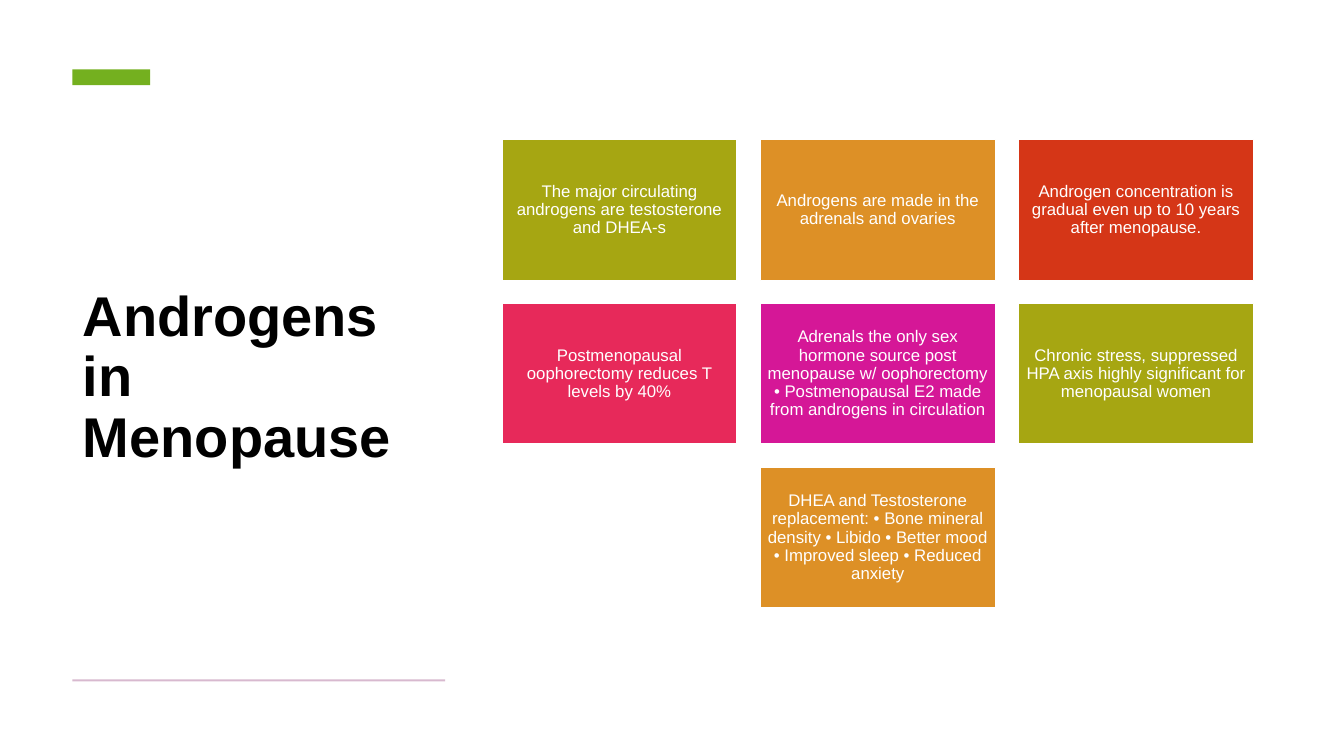
from dataclasses import dataclass

from pptx import Presentation
from pptx.dml.color import RGBColor
from pptx.enum.shapes import MSO_SHAPE
from pptx.enum.text import MSO_ANCHOR, MSO_AUTO_SIZE, PP_ALIGN
from pptx.util import Emu, Pt

PX = 9525


@dataclass(frozen=True)
class Theme:
    font: str = "Arial"
    title_size: int = 40
    card_size: int = 12
    ink: str = "000000"
    paper: str = "FFFFFF"
    accent: str = "74B01F"
    rule: str = "D8B9CF"
    cards: tuple = ("A6A612", "DD9026", "D53617", "E7295A", "D51797")


THEME = Theme()

TITLE = "Androgens in Menopause"
FACTS = [
    "The major circulating androgens are testosterone and DHEA-s",
    "Androgens are made in the adrenals and ovaries",
    "Androgen concentration is gradual even up to 10 years after menopause.",
    "Postmenopausal oophorectomy reduces T levels by 40%",
    "Adrenals the only sex hormone source post menopause w/ oophorectomy "
    "• Postmenopausal E2 made from androgens in circulation",
    "Chronic stress, suppressed HPA axis highly significant for menopausal women",
    "DHEA and Testosterone replacement: • Bone mineral density • Libido "
    "• Better mood • Improved sleep • Reduced anxiety",
]


def px(n):
    return Emu(n * PX)


def rgb(color):
    return RGBColor.from_string(color)


def add_rect(shapes, x, y, w, h, fill, line=None):
    sp = shapes.add_shape(MSO_SHAPE.RECTANGLE, px(x), px(y), px(w), px(h))
    sp.shadow.inherit = False
    sp.fill.solid()
    sp.fill.fore_color.rgb = rgb(fill)
    if line:
        sp.line.color.rgb = rgb(line)
        sp.line.width = Pt(1)
    else:
        sp.line.fill.background()
    return sp


def set_text(sp, text, size, color, bold=False, align=PP_ALIGN.LEFT, inset_x=10, inset_y=5):
    tf = sp.text_frame
    tf.word_wrap = True
    tf.auto_size = MSO_AUTO_SIZE.NONE
    tf.vertical_anchor = MSO_ANCHOR.MIDDLE
    tf.margin_left = tf.margin_right = px(inset_x)
    tf.margin_top = tf.margin_bottom = px(inset_y)
    p = tf.paragraphs[0]
    p.alignment = align
    p.line_spacing = 0.9
    r = p.add_run()
    r.text = text
    r.font.name = THEME.font
    r.font.size = Pt(size)
    r.font.bold = bold
    r.font.color.rgb = rgb(color)


def add_title_panel(s, x, y, w, h):
    title = s.shapes.title
    title.left, title.top = px(x), px(y + 35)
    title.width, title.height = px(w), px(h - 64)
    set_text(title, TITLE, THEME.title_size, THEME.ink, bold=True)
    add_rect(s.shapes, x, y, 74, 15, THEME.accent)
    add_rect(s.shapes, x, y + h - 2, w, 2, THEME.rule)


def add_card_grid(s, x, y, w, h, cols=3, gap=22):
    rows = -(-len(FACTS) // cols)
    card_w = (w - gap * (cols - 1)) // cols
    card_h = (h - gap * (rows - 1)) // rows
    group = s.shapes.add_group_shape()
    for i, fact in enumerate(FACTS):
        row, col = divmod(i, cols)
        in_row = min(cols, len(FACTS) - row * cols)
        indent = (cols - in_row) * (card_w + gap) // 2
        card = add_rect(
            group.shapes,
            x + indent + col * (card_w + gap),
            y + row * (card_h + gap),
            card_w,
            card_h,
            THEME.cards[i % len(THEME.cards)],
            line=THEME.paper,
        )
        set_text(card, fact, THEME.card_size, THEME.paper, align=PP_ALIGN.CENTER, inset_x=5)


def main():
    prs = Presentation()
    prs.slide_width, prs.slide_height = px(1280), px(720)
    s = prs.slides.add_slide(prs.slide_layouts[5])
    s.background.fill.solid()
    s.background.fill.fore_color.rgb = rgb(THEME.paper)
    add_title_panel(s, 69, 66, 355, 583)
    add_card_grid(s, 478, 133, 716, 446)
    prs.save("out.pptx")


if __name__ == "__main__":
    main()
